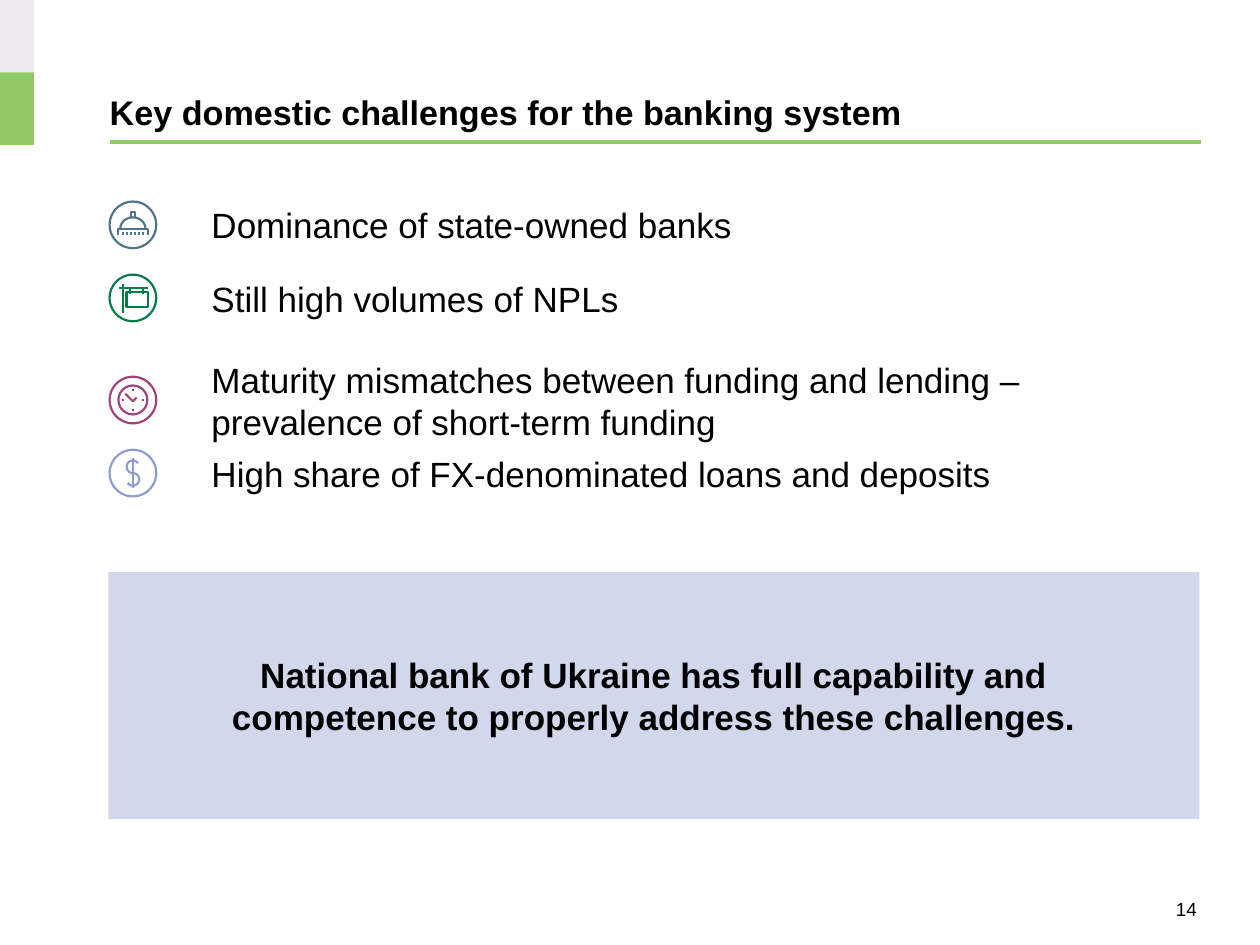
from dataclasses import dataclass
from math import cos, radians, sin

from lxml.etree import SubElement
from pptx import Presentation
from pptx.dml.color import RGBColor
from pptx.enum.shapes import MSO_CONNECTOR, MSO_SHAPE
from pptx.enum.text import MSO_ANCHOR, MSO_AUTO_SIZE, PP_ALIGN
from pptx.oxml.ns import qn
from pptx.util import Inches, Pt


@dataclass(frozen=True)
class Theme:
    font: str = "Arial"
    ink: str = "000000"
    green: str = "91CA64"
    grey: str = "EEEBEE"
    panel: str = "D1D8EC"
    bank: str = "50748A"
    sign: str = "057C48"
    clock: str = "A3417C"
    dollar: str = "8D9DD0"
    title: float = 19.5
    body: float = 20
    small: float = 10.8
    rule: float = 2.25
    stroke: float = 1.25


THEME = Theme()


def color(code):
    return RGBColor.from_string(code)


def write(frame, lines, size, bold=False, align=PP_ALIGN.LEFT,
          anchor=MSO_ANCHOR.MIDDLE, inset=(0, 0)):
    frame.word_wrap = True
    frame.auto_size = MSO_AUTO_SIZE.NONE
    frame.vertical_anchor = anchor
    frame.margin_left = frame.margin_right = Inches(inset[0])
    frame.margin_top = frame.margin_bottom = Inches(inset[1])
    for i, line in enumerate(lines):
        par = frame.paragraphs[0] if i == 0 else frame.add_paragraph()
        par.alignment = align
        run = par.add_run()
        run.text = line
        font = run.font
        font.name, font.size, font.bold = THEME.font, Pt(size), bold
        font.color.rgb = color(THEME.ink)


def block(slide, x, y, w, h, fill):
    shape = slide.shapes.add_shape(
        MSO_SHAPE.RECTANGLE, Inches(x), Inches(y), Inches(w), Inches(h))
    shape.shadow.inherit = False
    shape.fill.solid()
    shape.fill.fore_color.rgb = color(fill)
    shape.line.fill.background()
    return shape


def rule(slide, x1, y1, x2, y2, tint, width):
    line = slide.shapes.add_connector(
        MSO_CONNECTOR.STRAIGHT, Inches(x1), Inches(y1), Inches(x2), Inches(y2))
    line.line.color.rgb = color(tint)
    line.line.width = Pt(width)
    SubElement(line._element.spPr, qn("a:effectLst"))


def arc(cy, rx, ry, start, end, steps=12):
    """Points on an ellipse centred at (0, cy); angles run clockwise."""
    turns = [radians(start + (end - start) * i / steps) for i in range(steps + 1)]
    return [(rx * cos(t), cy + ry * sin(t)) for t in turns]


def bank():
    teeth = [[(x, 0.06), (x, 0.08)]
             for x in (-0.08 + 0.032 * i for i in range(6))]
    return [[(-0.12, 0.08), (-0.12, 0.03), (0.12, 0.03), (0.12, 0.08)],
            arc(0.03, 0.1, 0.09, 180, 360),
            [(-0.015, -0.06), (-0.015, -0.1), (0.015, -0.1), (0.015, -0.06)],
            *teeth]


def sign():
    hooks = [[(x, -0.08), (x, -0.03)] for x in (-0.02, 0.08)]
    return [[(-0.08, -0.11), (-0.08, 0.12)],
            [(-0.11, -0.08), (0.12, -0.08)],
            [(-0.05, -0.05), (0.12, -0.05), (0.12, 0.07), (-0.05, 0.07),
             (-0.05, -0.05)],
            *hooks]


def clock():
    ticks = [[(0.07 * x, 0.07 * y), (0.085 * x, 0.085 * y)]
             for x, y in ((0, -1), (1, 0), (0, 1), (-1, 0))]
    return [arc(0, 0.115, 0.115, 0, 360, 24),
            [(-0.06, -0.05), (0, 0.01), (0.03, -0.02)],
            *ticks]


def dollar():
    return [[(0, -0.12), (0, 0.12)],
            arc(-0.05, 0.05, 0.05, -35, -270) + arc(0.05, 0.05, 0.05, -90, 145)]


def icon(slide, x, y, size, strokes, tint):
    """A ring with line art; strokes are offsets from its centre."""
    ring = slide.shapes.add_shape(
        MSO_SHAPE.OVAL, Inches(x), Inches(y), Inches(size), Inches(size))
    spots = [[(Inches(x + size / 2 + dx), Inches(y + size / 2 + dy))
              for dx, dy in stroke] for stroke in strokes]
    form = slide.shapes.build_freeform(*spots[0][0])
    for i, stroke in enumerate(spots):
        if i:
            form.move_to(*stroke[0])
        form.add_line_segments(stroke[1:], close=False)
    for shape in (ring, form.convert_to_shape()):
        shape.shadow.inherit = False
        shape.fill.background()
        shape.line.color.rgb = color(tint)
        shape.line.width = Pt(THEME.stroke)


def corner(slide, x, y, w, h):
    for i, fill in enumerate((THEME.grey, THEME.green)):
        block(slide, x, y + i * h / 2, w, h / 2, fill)


def header(slide, x, y, w, h):
    title = slide.shapes.title
    title.left, title.top = Inches(x), Inches(y)
    title.width, title.height = Inches(w), Inches(h)
    write(title.text_frame, ["Key domestic challenges for the banking system"],
          THEME.title, bold=True, anchor=MSO_ANCHOR.BOTTOM)
    rule(slide, x, y + h + 0.08, x + w, y + h + 0.08, THEME.green, THEME.rule)


def label(slide, x, y, w, h, lines, size, **style):
    box = slide.shapes.add_textbox(Inches(x), Inches(y), Inches(w), Inches(h))
    write(box.text_frame, lines, size, **style)


def point(slide, x, y, w, h, strokes, tint, lines):
    """One challenge: a ringed icon with its text on the right."""
    icon(slide, x, y + 0.01, h - 0.02, strokes, tint)
    label(slide, x + 0.71, y, w - 0.71, h, lines, THEME.body, inset=(0.1, 0.05))


def banner(slide, x, y, w, h):
    box = block(slide, x, y, w, h, THEME.panel)
    write(box.text_frame,
          ["National bank of Ukraine has full capability and competence "
           "to properly address these challenges."],
          THEME.body, bold=True, align=PP_ALIGN.CENTER, inset=(0.39, 0.05))


def main():
    deck = Presentation()
    deck.slide_width, deck.slide_height = Inches(10), Inches(7.5)
    slide = deck.slides.add_slide(deck.slide_layouts[5])
    left, width = 0.87, 8.66
    corner(slide, 0, 0, 0.27, 1.15)
    header(slide, left, 0.26, width, 0.79)
    points = (
        (1.59, bank(), THEME.bank, ["Dominance of state-owned banks"]),
        (2.17, sign(), THEME.sign, ["Still high volumes of NPLs"]),
        (2.98, clock(), THEME.clock,
         ["Maturity mismatches between funding and lending –",
          "prevalence of short-term funding"]),
        (3.56, dollar(), THEME.dollar,
         ["High share of FX-denominated loans and deposits"]),
    )
    for top, strokes, tint, lines in points:
        point(slide, left, top, width, 0.39, strokes, tint, lines)
    banner(slide, 0.86, 4.54, width, 1.96)
    label(slide, 8.35, 7.06, 1.15, 0.31, ["14"], THEME.small,
          align=PP_ALIGN.RIGHT)
    deck.save("out.pptx")


if __name__ == "__main__":
    main()
